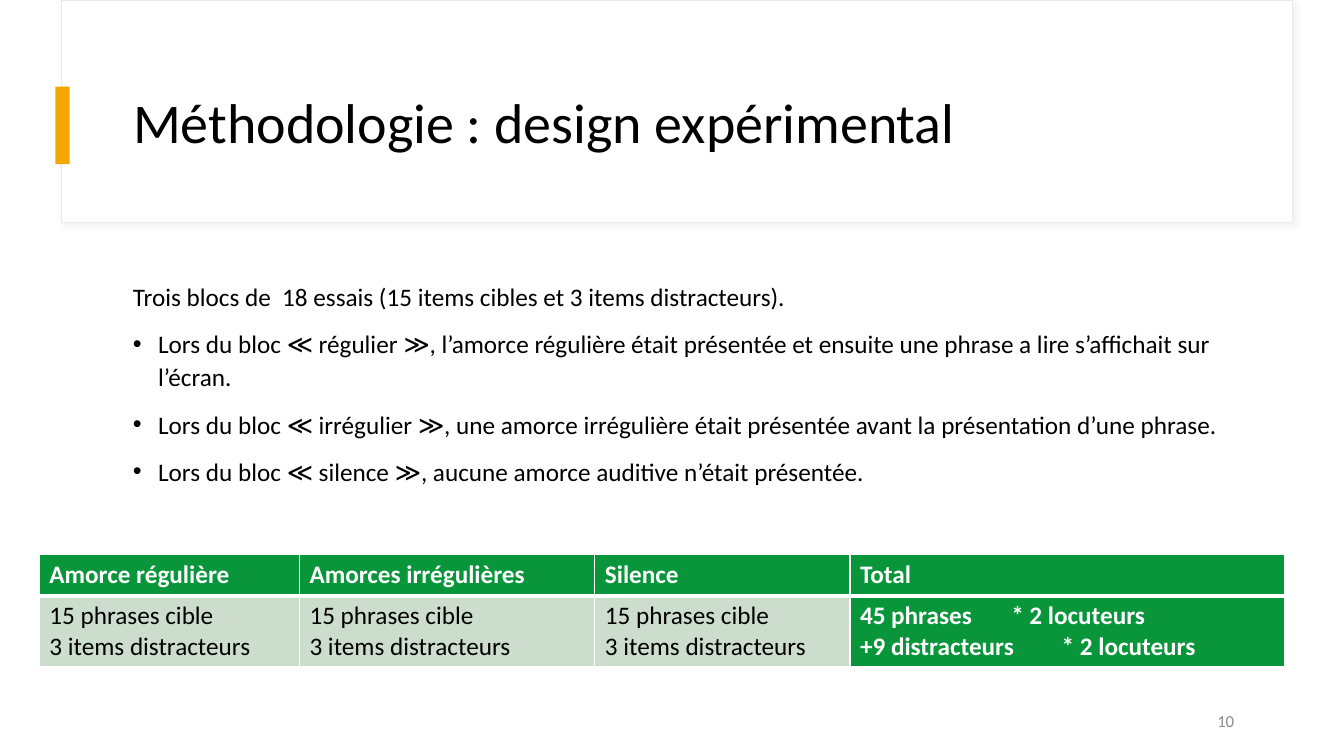
"""Build the slide describing the experimental design."""
from dataclasses import dataclass

from lxml.etree import SubElement
from pptx import Presentation
from pptx.dml.color import RGBColor
from pptx.enum.shapes import MSO_SHAPE
from pptx.enum.text import MSO_ANCHOR, PP_ALIGN
from pptx.oxml import parse_xml
from pptx.oxml.ns import nsdecls, qn
from pptx.shapes.autoshape import Shape
from pptx.slide import Slide
from pptx.table import _Cell
from pptx.text.text import TextFrame, _Paragraph
from pptx.util import Emu, Inches, Pt

FONT = "Calibri"
COLORS = {
    "white": "FFFFFF",
    "black": "000000",
    "outline": "E9E9E9",
    "shadow": "D9D9D9",
    "accent": "F5A700",
    "number": "8C8C8C",
    "green": "09963B",
    "pale": "CCDDCE",
}


@dataclass(frozen=True)
class Frame:
    """Position and size in inches."""

    left: float
    top: float
    width: float
    height: float

    def lengths(self) -> tuple[Emu, Emu, Emu, Emu]:
        """Return the four values as lengths."""
        return Inches(self.left), Inches(self.top), Inches(self.width), Inches(self.height)


@dataclass(frozen=True)
class Column:
    """One table column with its header and content."""

    width: float
    header: str
    lines: str
    total: bool = False


TARGETS = "15 phrases cible\n3 items distracteurs"
COLUMNS = [
    Column(2.58, "Amorce régulière", TARGETS),
    Column(2.93, "Amorces irrégulières", TARGETS),
    Column(2.53, "Silence", TARGETS),
    Column(4.31, "Total", "45 phrases\t* 2 locuteurs\n+9 distracteurs\t* 2 locuteurs", True),
]
ROW_HEIGHTS = [0.41, 0.7]
INTRO = "Trois blocs de  18 essais (15 items cibles et 3 items distracteurs)."
BLOCKS = [
    "Lors du bloc ≪ régulier ≫, l’amorce régulière était présentée et ensuite "
    "une phrase a lire s’affichait sur l’écran.",
    "Lors du bloc ≪ irrégulier ≫, une amorce irrégulière était présentée avant "
    "la présentation d’une phrase.",
    "Lors du bloc ≪ silence ≫, aucune amorce auditive n’était présentée.",
]


def color(name: str) -> RGBColor:
    """Look up a named colour."""
    return RGBColor.from_string(COLORS[name])


def format_text(text_frame: TextFrame, size: float, color_name: str, bold: bool = False) -> None:
    """Give every span in the frame the same font."""
    for para in text_frame.paragraphs:
        for span in para.runs:
            span.font.name = FONT
            span.font.size = Pt(size)
            span.font.bold = bold
            span.font.color.rgb = color(color_name)


def add_rectangle(slide: Slide, frame: Frame, fill: str) -> Shape:
    """Draw a plain filled rectangle."""
    box = slide.shapes.add_shape(MSO_SHAPE.RECTANGLE, *frame.lengths())
    box.shadow.inherit = False
    box.fill.solid()
    box.fill.fore_color.rgb = color(fill)
    box.line.fill.background()
    return box


def add_text_box(slide: Slide, frame: Frame, text: str) -> TextFrame:
    """Add a wrapping text box and return its frame."""
    text_frame = slide.shapes.add_textbox(*frame.lengths()).text_frame
    text_frame.word_wrap = True
    text_frame.text = text
    return text_frame


def add_title_panel(slide: Slide) -> None:
    """Draw the outlined panel with its soft shadow and the accent bar."""
    panel = add_rectangle(slide, Frame(0.61, 0, 12.21, 2.21), "white")
    panel.line.color.rgb = color("outline")
    panel.line.width = Pt(0.75)
    effects = panel.element.spPr.find(qn("a:effectLst"))
    effects.append(parse_xml(
        f'<a:outerShdw {nsdecls("a")} blurRad="{Pt(4)}" dist="{Pt(3)}" dir="2700000" '
        f'algn="tl" rotWithShape="0"><a:srgbClr val="{COLORS["shadow"]}">'
        '<a:alpha val="30000"/></a:srgbClr></a:outerShdw>'
    ))
    add_rectangle(slide, Frame(0.55, 0.86, 0.14, 0.77), "accent")


def set_title(slide: Slide, frame: Frame, text: str) -> None:
    """Place the title in front of its panel."""
    title = slide.shapes.title
    title.element.getparent().append(title.element)
    title.left, title.top, title.width, title.height = frame.lengths()
    title.text_frame.text = text
    title.text_frame.vertical_anchor = MSO_ANCHOR.MIDDLE
    para = title.text_frame.paragraphs[0]
    para.alignment = PP_ALIGN.LEFT
    para.line_spacing = 0.9
    format_text(title.text_frame, 40, "black")


def add_bullet(para: _Paragraph) -> None:
    """Give a paragraph a hanging round bullet."""
    properties = para._p.get_or_add_pPr()
    properties.set("marL", str(Inches(0.25)))
    properties.set("indent", str(-Inches(0.25)))
    SubElement(properties, qn("a:buFont"), typeface="Arial")
    SubElement(properties, qn("a:buChar"), char="•")


def add_body(slide: Slide) -> None:
    """Write the introduction and the bulleted blocks."""
    body = add_text_box(slide, Frame(1.22, 2.71, 11.12, 4.04), "\n".join([INTRO, *BLOCKS]))
    for para in body.paragraphs:
        para.line_spacing = 1.1
        para.space_before = Pt(10)
    for para in body.paragraphs[1:]:
        add_bullet(para)
    format_text(body, 18, "black")


def set_borders(cell: _Cell, bottom: float) -> None:
    """Draw white cell borders with the given bottom width."""
    properties = cell._tc.get_or_add_tcPr()
    for tag, width in {"lnL": 1, "lnR": 1, "lnT": 4 - bottom, "lnB": bottom}.items():
        line = SubElement(properties, qn(f"a:{tag}"), w=str(Pt(width)))
        fill = SubElement(line, qn("a:solidFill"))
        SubElement(fill, qn("a:srgbClr"), val=COLORS["white"])


def fill_cell(cell: _Cell, text: str, strong: bool, bottom: float) -> None:
    """Write and style one cell."""
    set_borders(cell, bottom)
    cell.fill.solid()
    cell.fill.fore_color.rgb = color("green" if strong else "pale")
    cell.text_frame.text = text
    format_text(cell.text_frame, 18, "white" if strong else "black", strong)


def add_design_table(slide: Slide) -> None:
    """Add the table of conditions and totals."""
    frame = Frame(0.39, 5.5, sum(column.width for column in COLUMNS), sum(ROW_HEIGHTS))
    table = slide.shapes.add_table(len(ROW_HEIGHTS), len(COLUMNS), *frame.lengths()).table
    for row, height in zip(table.rows, ROW_HEIGHTS):
        row.height = Inches(height)
    for index, column in enumerate(COLUMNS):
        table.columns[index].width = Inches(column.width)
        fill_cell(table.cell(0, index), column.header, True, 3)
        fill_cell(table.cell(1, index), column.lines, column.total, 1)


def add_slide_number(slide: Slide) -> None:
    """Write the slide number at the lower right."""
    number = add_text_box(slide, Frame(9.34, 6.95, 3, 0.4), "10")
    number.vertical_anchor = MSO_ANCHOR.MIDDLE
    number.paragraphs[0].alignment = PP_ALIGN.RIGHT
    format_text(number, 12, "number")


def main() -> None:
    """Build and save the deck."""
    deck = Presentation()
    deck.slide_width, deck.slide_height = Inches(13.33), Inches(7.5)
    page = deck.slides.add_slide(deck.slide_layouts[5])
    add_title_panel(page)
    set_title(page, Frame(1.22, 0.6, 11.12, 1.29), "Méthodologie : design expérimental")
    add_body(page)
    add_slide_number(page)
    add_design_table(page)
    deck.save("out.pptx")


if __name__ == "__main__":
    main()
